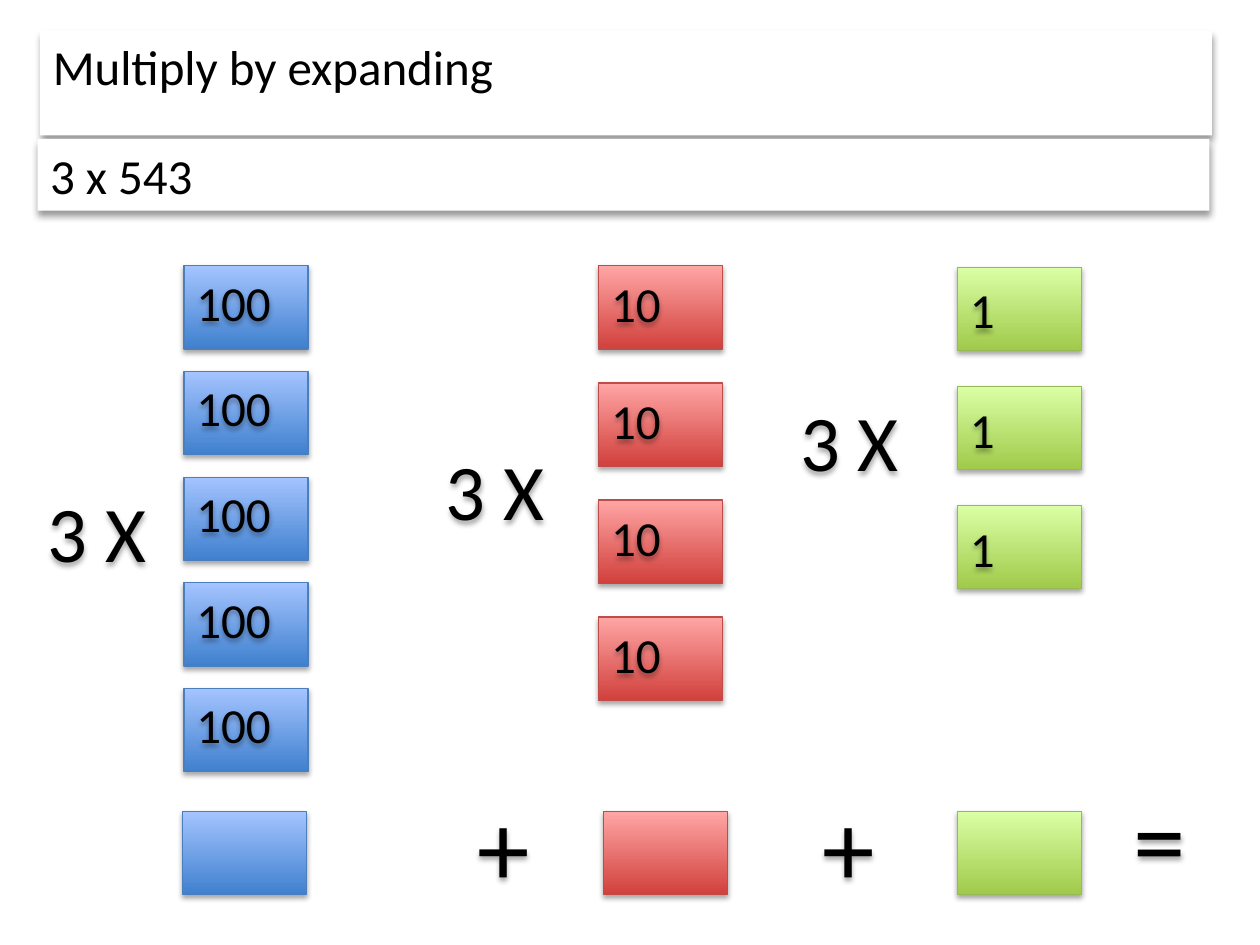
from lxml.etree import SubElement
from pptx import Presentation
from pptx.dml.color import RGBColor
from pptx.enum.shapes import MSO_SHAPE
from pptx.enum.text import MSO_ANCHOR, MSO_AUTO_SIZE, PP_ALIGN
from pptx.oxml.ns import qn
from pptx.util import Cm, Pt

COLORS = {
    "text": "000000",
    "banner": "FFFFFF",
    "shadow": "000000",
    "hundreds": ("3F80CE", "A4C4FF", "4B7EBC"),
    "tens": ("D1403C", "FFA6A5", "BF4C48"),
    "ones": ("A0CA4A", "DAFFA5", "98B955"),
}
CARD_WIDTH, CARD_HEIGHT = 2.5, 1.68
TOTAL_TOP = 16.36
COLUMNS = [
    # kind, value, count, left, top, pitch, label offset, total left
    ("hundreds", "100", 5, 3.71, 5.36, 2.13, 0, 3.68),
    ("tens", "10", 4, 12.07, 5.36, 2.36, 0.03, 12.17),
    ("ones", "1", 3, 19.3, 5.39, 2.4, 0.13, 19.3),
]
MULTIPLIERS = [(0.71, 9.63), (8.74, 8.79), (15.88, 7.8)]
OPERATORS = [("+", 9.37, 15.62), ("+", 16.33, 15.62), ("=", 22.61, 15.47)]


def add_shadow(shape, blur, distance, opacity):
    shape.shadow.inherit = False
    effects = shape._element.spPr.find(qn("a:effectLst"))
    shadow = SubElement(
        effects, qn("a:outerShdw"), blurRad=str(Pt(blur)), dist=str(Pt(distance)),
        dir="5400000", rotWithShape="0")
    color = SubElement(shadow, qn("a:srgbClr"), val=COLORS["shadow"])
    SubElement(color, qn("a:alpha"), val=str(opacity * 1000))


def write_text(shape, text, size):
    frame = shape.text_frame
    frame.word_wrap = True
    frame.auto_size = MSO_AUTO_SIZE.SHAPE_TO_FIT_TEXT
    frame.vertical_anchor = MSO_ANCHOR.TOP
    paragraph = frame.paragraphs[0]
    paragraph.alignment = PP_ALIGN.LEFT
    run = paragraph.add_run()
    run.text = text
    run.font.name = "Calibri"
    run.font.size = Pt(size)
    run.font.color.rgb = RGBColor.from_string(COLORS["text"])


def format_banner(shape, text, left, top):
    shape.left, shape.top = Cm(left), Cm(top)
    shape.width, shape.height = Cm(23.62), Cm(1.45)
    shape.fill.solid()
    shape.fill.fore_color.rgb = RGBColor.from_string(COLORS["banner"])
    shape.line.fill.background()
    add_shadow(shape, 4, 3, 40)
    write_text(shape, text, 28)


def add_label(slide, text, left, top, width, height, size):
    label = slide.shapes.add_textbox(Cm(left), Cm(top), Cm(width), Cm(height))
    add_shadow(label, 3.1, 1.8, 35)
    write_text(label, text, size)


def add_card(slide, kind, left, top):
    card = slide.shapes.add_shape(
        MSO_SHAPE.RECTANGLE, Cm(left), Cm(top), Cm(CARD_WIDTH), Cm(CARD_HEIGHT))
    dark, light, outline = COLORS[kind]
    card.fill.gradient()
    card.fill.gradient_angle = 90
    for stop, color in zip(card.fill.gradient_stops, (dark, light)):
        stop.color.rgb = RGBColor.from_string(color)
    card.line.color.rgb = RGBColor.from_string(outline)
    card.line.width = Pt(0.75)
    add_shadow(card, 3.1, 1.8, 35)


def add_column(slide, kind, value, count, left, top, pitch, label_offset, total_left):
    for row in range(count):
        row_top = top + row * pitch
        add_card(slide, kind, left, row_top)
        add_label(slide, value, left, row_top + label_offset, 2.9, 1.45, 28)
    add_card(slide, kind, total_left, TOTAL_TOP)


def main():
    presentation = Presentation()
    presentation.slide_width, presentation.slide_height = Cm(25.4), Cm(19.05)
    slide = presentation.slides.add_slide(presentation.slide_layouts[5])
    format_banner(slide.shapes.title, "Multiply by expanding", 0.81, 0.61)
    problem = slide.shapes.add_shape(MSO_SHAPE.RECTANGLE, 0, 0, 0, 0)
    format_banner(problem, "3 x 543", 0.76, 2.8)
    for column in COLUMNS:
        add_column(slide, *column)
    for left, top in MULTIPLIERS:
        add_label(slide, "3 X", left, top, 2.9, 2.18, 45)
    for symbol, left, top in OPERATORS:
        add_label(slide, symbol, left, top, 2.29, 2.82, 60)
    presentation.save("out.pptx")


if __name__ == "__main__":
    main()
